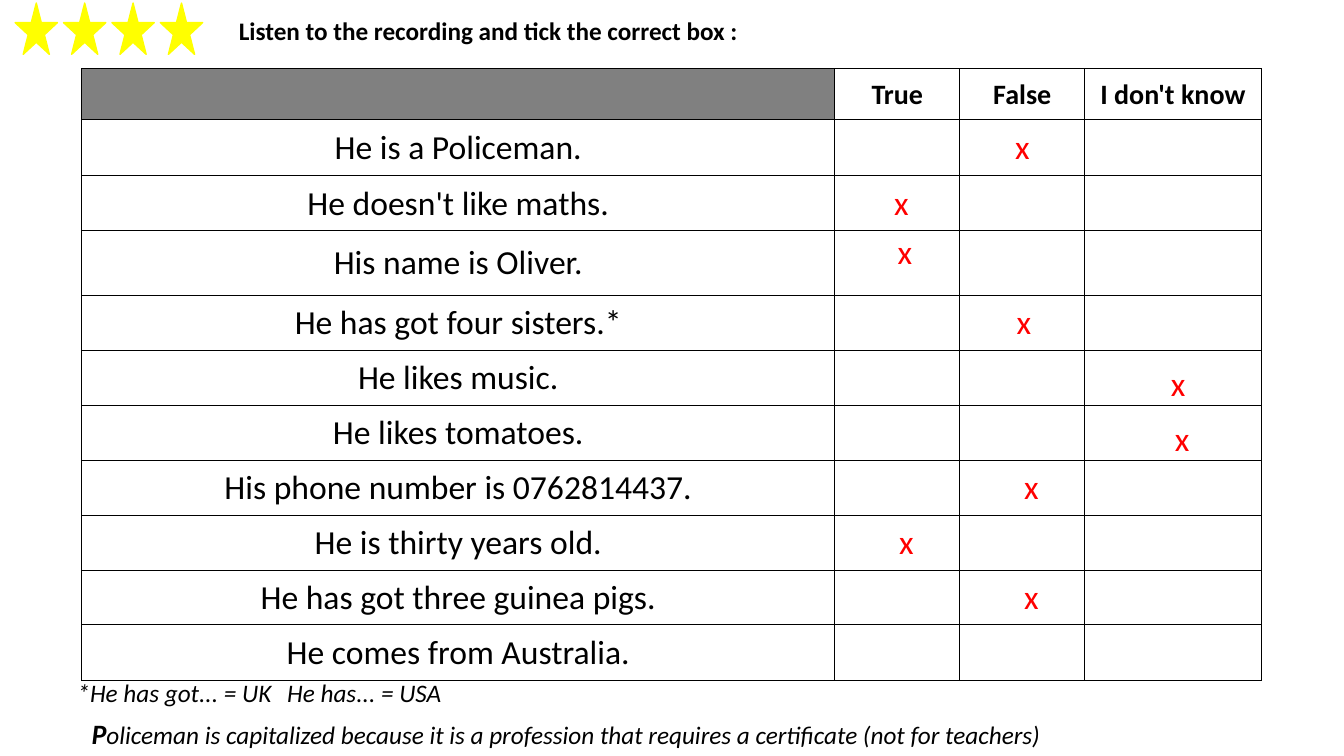
from lxml.etree import SubElement
from pptx import Presentation
from pptx.dml.color import RGBColor
from pptx.enum.shapes import MSO_SHAPE
from pptx.enum.text import MSO_ANCHOR, PP_ALIGN
from pptx.oxml.ns import qn
from pptx.util import Inches, Pt

BLACK = RGBColor(0x00, 0x00, 0x00)
WHITE = RGBColor(0xFF, 0xFF, 0xFF)
GREY = RGBColor(0x80, 0x80, 0x80)
RED = RGBColor(0xFF, 0x00, 0x00)
YELLOW = RGBColor(0xFF, 0xFF, 0x00)

HEADERS = ["", "True", "False", "I don't know"]
STATEMENTS = [
    "He is a Policeman.",
    "He doesn't like maths.",
    "His name is Oliver.",
    "He has got four sisters.*",
    "He likes music.",
    "He likes tomatoes.",
    "His phone number is 0762814437.",
    "He is thirty years old.",
    "He has got three guinea pigs.",
    "He comes from Australia.",
]
TRUE, FALSE, UNKNOWN = 1, 2, 3
MID, LOW = MSO_ANCHOR.MIDDLE, MSO_ANCHOR.BOTTOM
# row: (column, left margin, bottom margin, anchor)
ANSWERS = {
    1: (FALSE, 0.01, 0, MID),
    2: (TRUE, 0.09, 0, MID),
    3: (TRUE, 0.16, 0.2, MID),
    4: (FALSE, 0.04, 0, MID),
    5: (UNKNOWN, 0.11, 0, LOW),
    6: (UNKNOWN, 0.19, 0, LOW),
    7: (FALSE, 0.19, 0, MID),
    8: (TRUE, 0.19, 0, MID),
    9: (FALSE, 0.19, 0, MID),
}
COL_WIDTHS = [7.47, 1.24, 1.24, 1.75]
ROW_HEIGHTS = [0.51, 0.55, 0.55, 0.64] + [0.55, 0.54] * 3 + [0.55]


class Worksheet:
    """Draws the parts of a listening worksheet on one slide."""

    font_name = "Calibri"

    def __init__(self, prs):
        self.slide = prs.slides.add_slide(prs.slide_layouts[6])

    def style(self, p, size, color=BLACK, bold=False, italic=False):
        font = p.font
        font.name, font.size = self.font_name, Pt(size)
        font.bold, font.italic = bold, italic
        font.color.rgb = color

    def text(self, left, top, width, height, runs, size, tab=None, **look):
        box = self.slide.shapes.add_textbox(
            Inches(left), Inches(top), Inches(width), Inches(height))
        tf = box.text_frame
        tf.word_wrap = True
        p = tf.paragraphs[0]
        if tab:
            tabs = SubElement(p._p.get_or_add_pPr(), qn("a:tabLst"))
            SubElement(tabs, qn("a:tab"), pos=str(Inches(tab)), algn="l")
        self.style(p, size, **look)
        for words in runs:
            p.add_run().text = words
        return p

    def stars(self, count, left, top, pitch, width, height):
        group = self.slide.shapes.add_group_shape()
        for i in range(count):
            sp = group.shapes.add_shape(
                MSO_SHAPE.STAR_5_POINT, Inches(left + i * pitch), Inches(top),
                Inches(width), Inches(height))
            sp.shadow.inherit = False
            sp.fill.solid()
            sp.fill.fore_color.rgb = YELLOW
            sp.line.color.rgb = YELLOW
            sp.line.width = Pt(1)

    def table(self, left, top, widths, heights):
        frame = self.slide.shapes.add_table(
            len(heights), len(widths), Inches(left), Inches(top),
            Inches(sum(widths)), Inches(sum(heights)))
        table = frame.table
        table.first_row = table.horz_banding = False
        for column, width in zip(table.columns, widths):
            column.width = Inches(width)
        for row, height in zip(table.rows, heights):
            row.height = Inches(height)
        for cell in table.iter_cells():
            self.border(cell)
            cell.fill.solid()
            cell.fill.fore_color.rgb = WHITE
        table.cell(0, 0).fill.fore_color.rgb = GREY
        return table

    def border(self, cell):
        tc_pr = cell._tc.get_or_add_tcPr()
        for side in ("lnL", "lnR", "lnT", "lnB"):
            ln = SubElement(tc_pr, qn(f"a:{side}"), w=str(Pt(0.75)))
            fill = SubElement(ln, qn("a:solidFill"))
            SubElement(fill, qn("a:srgbClr"), val=str(BLACK))

    def cell(self, cell, words, size, left=0.01, bottom=0, anchor=MID, **look):
        cell.margin_left, cell.margin_bottom = Inches(left), Inches(bottom)
        cell.margin_right = cell.margin_top = Inches(0.01)
        cell.vertical_anchor = anchor
        p = cell.text_frame.paragraphs[0]
        p.alignment = PP_ALIGN.CENTER
        self.style(p, size, **look)
        p.add_run().text = words


def main():
    prs = Presentation()
    prs.slide_width, prs.slide_height = Inches(13.33), Inches(7.5)
    s = Worksheet(prs)

    s.text(2.27, 0.1, 5.3, 0.4,
           ["Listen to the recording and tick the correct box :"], 18, bold=True)

    table = s.table(0.81, 0.68, COL_WIDTHS, ROW_HEIGHTS)
    for col, header in enumerate(HEADERS):
        if header:
            s.cell(table.cell(0, col), header, 20, bold=True)
    for row, statement in enumerate(STATEMENTS, start=1):
        s.cell(table.cell(row, 0), statement, 24)
    for row, (col, left, bottom, anchor) in ANSWERS.items():
        s.cell(table.cell(row, col), "x", 24, left, bottom, anchor, color=RED)

    s.text(0.67, 6.67, 3.92, 0.4,
           ["*He has got... = UK\tHe has... = USA"], 18, tab=2.08, italic=True)
    s.stars(4, left=0.15, top=0.03, pitch=0.48, width=0.42, height=0.51)
    p = s.text(0.81, 7.06, 10.86, 0.44,
               ["P", "oliceman is capitalized because it is a profession that "
                     "requires a certificate (not for teachers)"], 18, italic=True)
    initial = p.runs[0].font
    initial.size, initial.bold = Pt(20), True

    prs.save("out.pptx")


if __name__ == "__main__":
    main()
